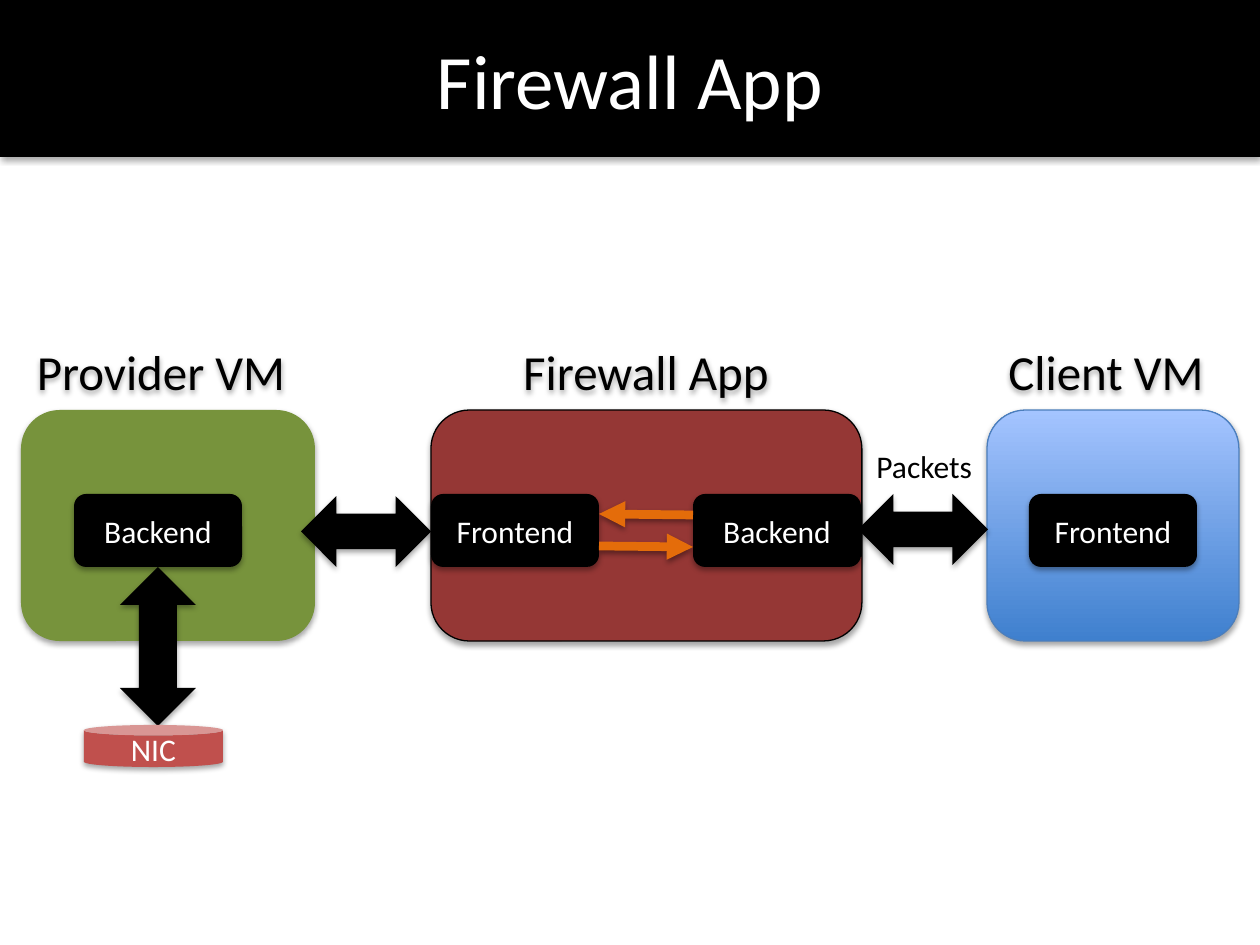
from lxml import etree
from pptx import Presentation
from pptx.dml.color import RGBColor
from pptx.enum.shapes import MSO_CONNECTOR, MSO_SHAPE
from pptx.enum.text import MSO_ANCHOR, PP_ALIGN
from pptx.oxml import parse_xml
from pptx.oxml.ns import qn
from pptx.util import Pt

ROUNDED, CAN = MSO_SHAPE.ROUNDED_RECTANGLE, MSO_SHAPE.CAN
ACROSS, UPDOWN = MSO_SHAPE.LEFT_RIGHT_ARROW, MSO_SHAPE.UP_DOWN_ARROW
STRAIGHT = MSO_CONNECTOR.STRAIGHT
CENTER, LEFT = PP_ALIGN.CENTER, PP_ALIGN.LEFT
MIDDLE, TOP = MSO_ANCHOR.MIDDLE, MSO_ANCHOR.TOP

BLACK = RGBColor(0x00, 0x00, 0x00)
WHITE = RGBColor(0xFF, 0xFF, 0xFF)
GREEN = RGBColor(0x77, 0x93, 0x3C)
MAROON = RGBColor(0x95, 0x37, 0x35)
RED = RGBColor(0xC0, 0x50, 0x4D)
ORANGE = RGBColor(0xE4, 0x6C, 0x0A)
BLUE_EDGE = RGBColor(0x4B, 0x7E, 0xBC)
BLUES = (RGBColor(0x3F, 0x80, 0xCE), RGBColor(0xA4, 0xC4, 0xFF))

PX = 914400 / 126
SLIDE_W, SLIDE_H, BANNER_H = 1260, 945, 157
FONT = "Calibri"

# Content: positions in px
TITLE = "Firewall App"
MACHINES = [  # left, width, fill, edge
    (21, 294, GREEN, None),
    (431, 431, MAROON, BLACK),
    (987, 252, BLUES, BLUE_EDGE),
]
MACHINE_TOP, MACHINE_H = 410, 231
LABELS = [("Provider VM", 21, 280), ("Firewall App", 462, 368), ("Client VM", 984, 244)]
LABEL_H = 79
DRIVERS = [("Backend", 74), ("Frontend", 431), ("Backend", 693), ("Frontend", 1029)]
DRIVER_TOP, DRIVER_W, DRIVER_H = 494, 168, 73
LINKS = [  # preset, left, top, width, height
    (ACROSS, 858, 494, 130, 71),
    (ACROSS, 301, 496, 130, 71),
    (UPDOWN, 120, 567, 76, 159),
]
FLOWS = [(546, "tailEnd"), (514, "headEnd")]  # top, arrowhead end


def emu(*lengths):
    return [round(length * PX) for length in lengths]


def add_shadow(item, alpha=35):
    item._element.spPr.append(parse_xml(
        '<a:effectLst xmlns:a="http://schemas.openxmlformats.org/drawingml/2006/main">'
        '<a:outerShdw blurRad="40000" dist="23000" dir="5400000" rotWithShape="0">'
        f'<a:srgbClr val="000000"><a:alpha val="{alpha}000"/></a:srgbClr>'
        '</a:outerShdw></a:effectLst>'))


def write(item, text, size, color, align=CENTER, anchor=MIDDLE, wrap=True):
    frame = item.text_frame
    frame.text = text
    frame.word_wrap = wrap
    frame.vertical_anchor = anchor
    paragraph = frame.paragraphs[0]
    paragraph.alignment = align
    font = paragraph.runs[0].font
    font.name, font.size, font.color.rgb = FONT, Pt(size), color


def add_block(preset, box, fill, edge=None):
    block = slide.shapes.add_shape(preset, *emu(*box))
    if isinstance(fill, RGBColor):
        block.fill.solid()
        block.fill.fore_color.rgb = fill
    else:
        block.fill.gradient()
        block.fill.gradient_angle = 90
        for stop, color, position in zip(block.fill.gradient_stops, fill, (0, 1)):
            stop.color.rgb, stop.position = color, position
    if edge is None:
        block.line.fill.background()
    else:
        block.line.color.rgb, block.line.width = edge, Pt(0.75)
    add_shadow(block)
    return block


prs = Presentation()
prs.slide_width, prs.slide_height = emu(SLIDE_W, SLIDE_H)
slide = prs.slides.add_slide(prs.slide_layouts[5])

# Title banner
banner = slide.shapes.title
banner.left, banner.top, banner.width, banner.height = emu(0, 0, SLIDE_W, BANNER_H)
banner.fill.solid()
banner.fill.fore_color.rgb = BLACK
add_shadow(banner)
write(banner, TITLE, 44, WHITE)

# Virtual machines and their labels
for left, width, fill, edge in MACHINES:
    add_block(ROUNDED, (left, MACHINE_TOP, width, MACHINE_H), fill, edge)
for text, left, width in LABELS:
    label = slide.shapes.add_textbox(*emu(left, MACHINE_TOP - LABEL_H, width, LABEL_H))
    add_shadow(label)
    write(label, text, 28, BLACK)

# Network drivers
for text, left in DRIVERS:
    driver = add_block(ROUNDED, (left, DRIVER_TOP, DRIVER_W, DRIVER_H), BLACK)
    write(driver, text, 18, WHITE)

# Links between machines
for preset, *box in LINKS:
    add_block(preset, box, BLACK)
packets = slide.shapes.add_textbox(*emu(864, 441, 122, 50))
write(packets, "Packets", 18, BLACK, LEFT, TOP, wrap=False)

# Flows inside the firewall, between its two drivers
flow_start, flow_end = DRIVERS[1][1] + DRIVER_W, DRIVERS[2][1]
for top, arrow_end in FLOWS:
    flow = slide.shapes.add_connector(STRAIGHT, *emu(flow_start, top, flow_end, top + 1))
    flow.line.color.rgb, flow.line.width = ORANGE, Pt(5)
    etree.SubElement(flow.line._get_or_add_ln(), qn(f"a:{arrow_end}"), type="triangle")
    add_shadow(flow, alpha=38)

# Network card
nic = add_block(CAN, (84, 725, 139, 42), RED)
write(nic, "NIC", 18, WHITE)

prs.save("out.pptx")
